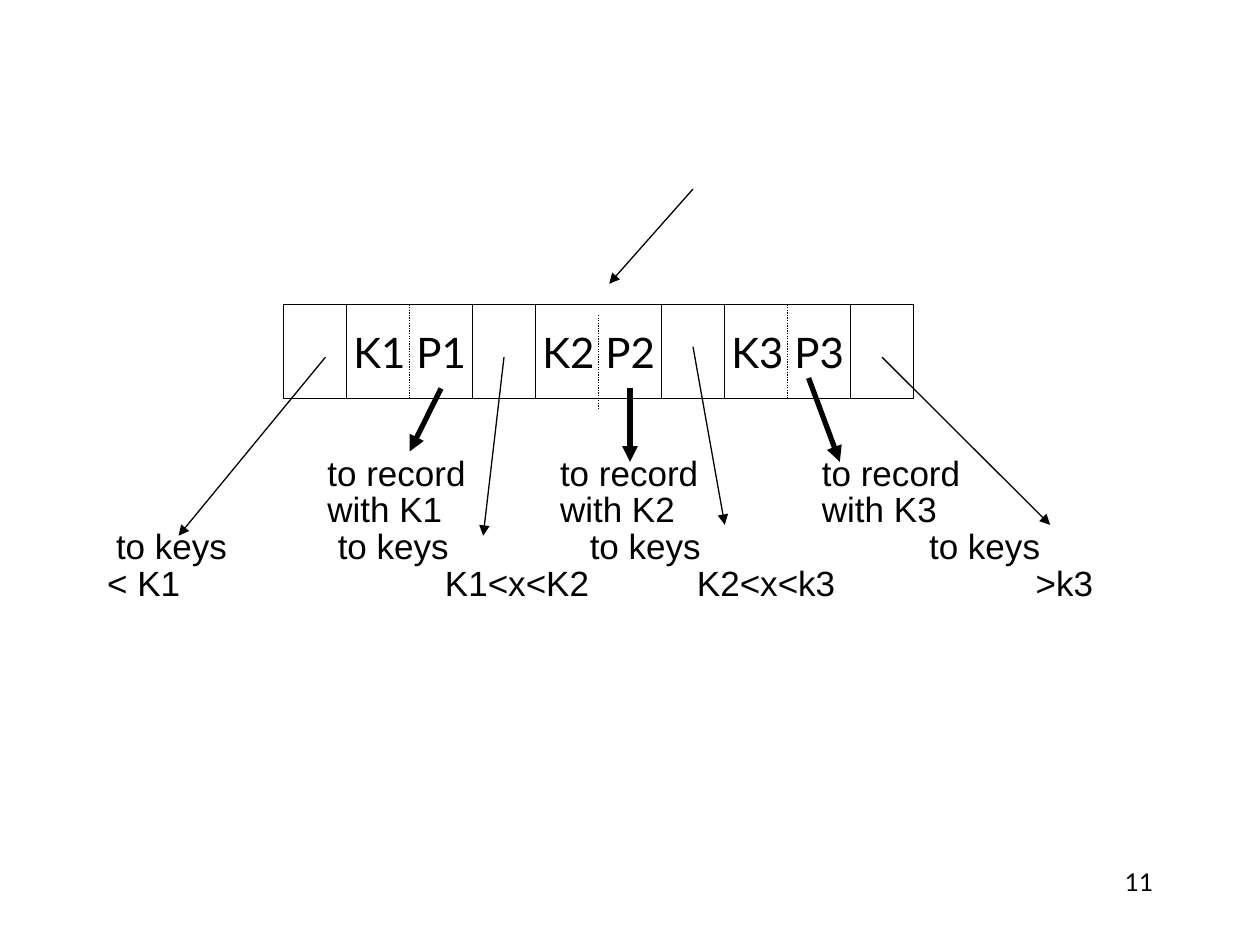
from dataclasses import dataclass

from lxml import etree
from pptx import Presentation
from pptx.dml.color import RGBColor
from pptx.enum.dml import MSO_LINE
from pptx.enum.shapes import MSO_CONNECTOR, MSO_SHAPE
from pptx.enum.text import MSO_ANCHOR, PP_ALIGN
from pptx.oxml.ns import qn
from pptx.slide import Slide
from pptx.text.text import TextFrame, _Paragraph
from pptx.util import Cm, Pt

RECTANGLE = MSO_SHAPE.RECTANGLE
STRAIGHT = MSO_CONNECTOR.STRAIGHT
DOTTED = MSO_LINE.ROUND_DOT
MIDDLE = MSO_ANCHOR.MIDDLE
CENTER, RIGHT = PP_ALIGN.CENTER, PP_ALIGN.RIGHT


@dataclass(frozen=True)
class Theme:
    ink: RGBColor = RGBColor(0x00, 0x00, 0x00)
    paper: RGBColor = RGBColor(0xFF, 0xFF, 0xFF)
    node_font: str = "Lato"
    label_font: str = "Arial"
    key_size: int = 24
    label_size: int = 20
    label_pitch: int = 21
    number_size: int = 14
    thin: float = 0.75
    thick: float = 3


@dataclass(frozen=True)
class Line:
    """A line between two points in centimetres."""
    start: tuple[float, float]
    end: tuple[float, float]
    width: float
    arrow: bool = True


@dataclass(frozen=True)
class LabelRow:
    """Labels on one text line, each starting at its own position."""
    labels: tuple[str, ...]
    positions: tuple[float, ...]


THEME = Theme()
CELL, NODE_LEFT, NODE_TOP, NODE_HEIGHT = 1.27, 5.72, 6.14, 1.9
KEY_COUNT = 3
LABEL_LEFT, LABEL_TOP = 1.9, 9.2

ARROWS = (
    Line((8.89, 7.83), (8.26, 9.1), THEME.thick),
    Line((12.7, 7.83), (12.7, 9.31), THEME.thick),
    Line((16.3, 7.62), (16.93, 9.31), THEME.thick),
    Line((6.56, 7.2), (3.6, 10.8), THEME.thin),
    Line((10.16, 7.2), (9.74, 10.8), THEME.thin),
    Line((13.97, 6.99), (14.61, 10.58), THEME.thin),
    Line((17.78, 7.2), (21.17, 10.58), THEME.thin),
    Line((13.97, 3.81), (12.28, 5.72), THEME.thin),
)

RECORD_POSITIONS = (6.6, 11.29, 16.57)
LABEL_ROWS = (
    LabelRow(("to record",) * 3, RECORD_POSITIONS),
    LabelRow(("with K1", "with K2", "with K3"), RECORD_POSITIONS),
    LabelRow(("to keys",) * 4, (2.34, 6.81, 11.89, 18.73)),
    LabelRow(("< K1", "K1<x<K2", "K2<x<k3", ">k3"), (2.16, 8.97, 14.05, 20.88)),
)


def add_run(paragraph: _Paragraph, text: str, font: str, size: int) -> None:
    run = paragraph.add_run()
    run.text = text
    run.font.name = font
    run.font.size = Pt(size)
    run.font.color.rgb = THEME.ink


def add_cell(slide: Slide, column: int, span: int, text: str = "") -> None:
    shape = slide.shapes.add_shape(
        RECTANGLE, Cm(NODE_LEFT + column * CELL), Cm(NODE_TOP),
        Cm(span * CELL), Cm(NODE_HEIGHT))
    shape.shadow.inherit = False
    shape.fill.solid()
    shape.fill.fore_color.rgb = THEME.paper
    shape.line.color.rgb = THEME.ink
    shape.line.width = Pt(THEME.thin)
    if text:
        frame = shape.text_frame
        frame.word_wrap = False
        frame.vertical_anchor = MIDDLE
        paragraph = frame.paragraphs[0]
        paragraph.alignment = CENTER
        add_run(paragraph, text, THEME.node_font, THEME.key_size)


def add_line(slide: Slide, line: Line) -> None:
    """Draw an arrow, or a dotted divider when the line has no arrowhead."""
    points = [Cm(value) for value in line.start + line.end]
    connector = slide.shapes.add_connector(STRAIGHT, *points)
    connector.line.color.rgb = THEME.ink
    connector.line.width = Pt(line.width)
    if line.arrow:
        outline = connector.line._get_or_add_ln()
        etree.SubElement(outline, qn("a:tailEnd"), type="triangle")
    else:
        connector.line.dash_style = DOTTED
    etree.SubElement(connector._element.spPr, qn("a:effectLst"))


def add_text_box(slide: Slide, left: float, top: float,
                 width: float, height: float) -> TextFrame:
    box = slide.shapes.add_textbox(Cm(left), Cm(top), Cm(width), Cm(height))
    box.text_frame.word_wrap = True
    return box.text_frame


def add_node(slide: Slide) -> None:
    for index in range(KEY_COUNT + 1):
        add_cell(slide, 3 * index, 1)
    for index in range(KEY_COUNT):
        add_cell(slide, 3 * index + 1, 2, f"K{index + 1} P{index + 1}")
    for index, drop in enumerate((0, 0.21, 0)):
        x = NODE_LEFT + (3 * index + 2) * CELL
        top = NODE_TOP + drop
        add_line(slide, Line((x, top), (x, top + NODE_HEIGHT), THEME.thin, False))


def add_labels(slide: Slide) -> None:
    frame = add_text_box(slide, LABEL_LEFT, LABEL_TOP, 21.4, 3)
    frame.margin_left = frame.margin_right = 0
    frame.margin_top = frame.margin_bottom = 0
    for index, row in enumerate(LABEL_ROWS):
        paragraph = frame.add_paragraph() if index else frame.paragraphs[0]
        paragraph.line_spacing = Pt(THEME.label_pitch)
        tabs = etree.SubElement(paragraph._p.get_or_add_pPr(), qn("a:tabLst"))
        for label, position in zip(row.labels, row.positions):
            etree.SubElement(tabs, qn("a:tab"),
                             pos=str(Cm(position - LABEL_LEFT)), algn="l")
            add_run(paragraph, f"\t{label}", THEME.label_font, THEME.label_size)


def add_slide_number(slide: Slide) -> None:
    paragraph = add_text_box(slide, 18.2, 17.36, 5.3, 1.27).paragraphs[0]
    paragraph.alignment = RIGHT
    add_run(paragraph, "11", THEME.node_font, THEME.number_size)


def main() -> None:
    presentation = Presentation()
    presentation.slide_width = Cm(25.4)
    presentation.slide_height = Cm(19.05)
    slide = presentation.slides.add_slide(presentation.slide_layouts[6])
    add_slide_number(slide)
    add_labels(slide)
    add_node(slide)
    for arrow in ARROWS:
        add_line(slide, arrow)
    presentation.save("out.pptx")


if __name__ == "__main__":
    main()
